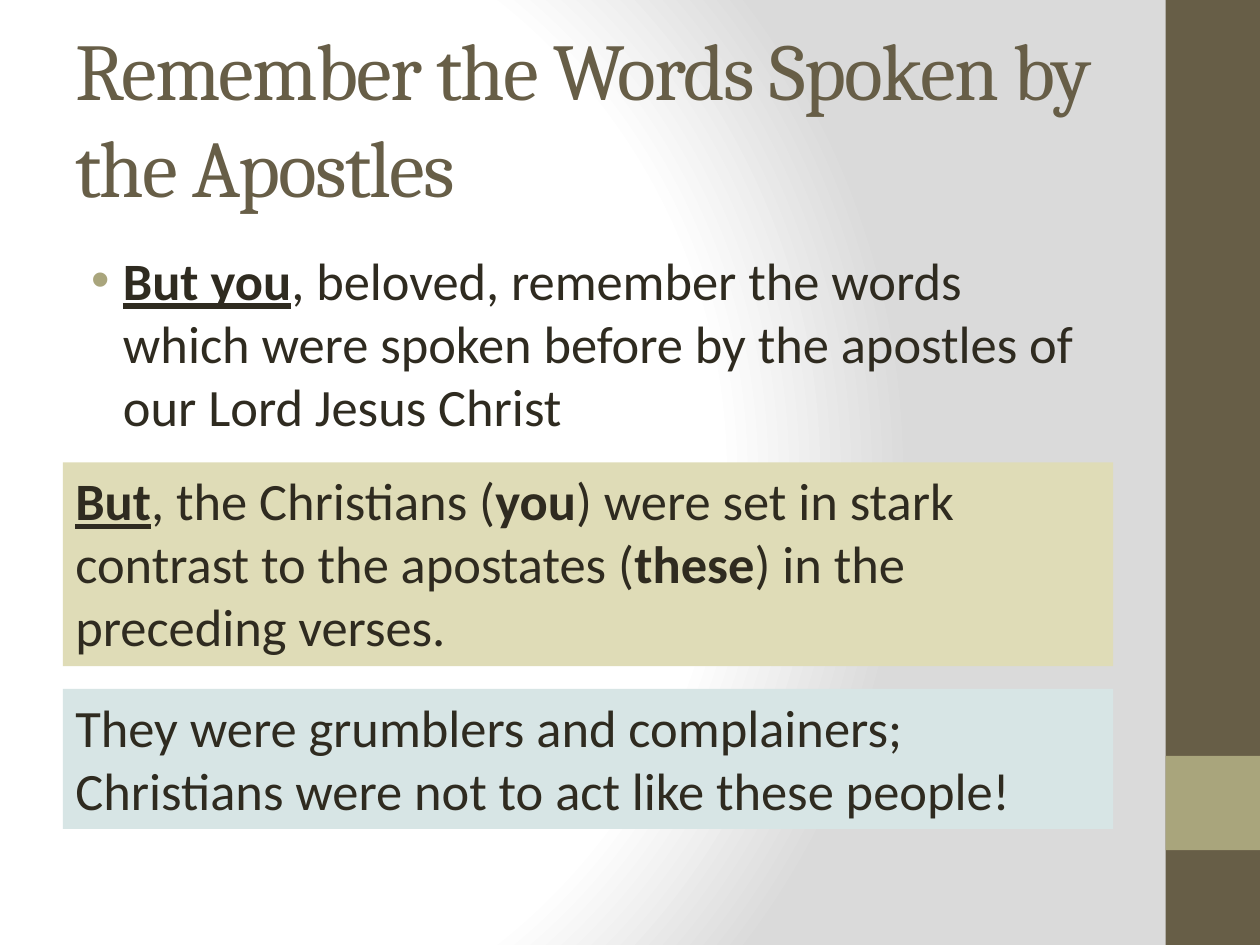
from lxml import etree
from pptx import Presentation
from pptx.dml.color import RGBColor
from pptx.enum import shapes, text
from pptx.oxml import parse_xml
from pptx.oxml.ns import nsdecls, qn
from pptx.util import Cm, Pt

BROWN = RGBColor(0x67, 0x5E, 0x47)
OLIVE = RGBColor(0xA9, 0xA5, 0x7C)
INK = RGBColor(0x2F, 0x2B, 0x20)
SAND = RGBColor(0xDF, 0xDC, 0xB7)
MIST = RGBColor(0xD7, 0xE5, 0xE5)
WHITE = RGBColor(0xFF, 0xFF, 0xFF)
GREY = RGBColor(0xDA, 0xDA, 0xDA)

LEFT, WIDTH = Cm(1.27), Cm(21.17)
BAND_LEFT, BAND_WIDTH = Cm(23.5), Cm(1.9)


def add_block(left, top, width, height, fill=None):
    """Add a borderless rectangle, or a plain text box when no fill is given."""
    if fill is None:
        block = slide.shapes.add_textbox(left, top, width, height)
    else:
        block = slide.shapes.add_shape(
            shapes.MSO_SHAPE.RECTANGLE, left, top, width, height)
        block.shadow.inherit = False
        block.fill.solid()
        block.fill.fore_color.rgb = fill
        block.line.fill.background()
    block.text_frame.word_wrap = True
    return block


def write(block, runs, size=30, font="Calibri", color=INK):
    """Write (wording, style) runs; style may hold b for bold and u for underline."""
    paragraph = block.text_frame.paragraphs[0]
    paragraph.alignment = text.PP_ALIGN.LEFT
    for wording, style in runs:
        run = paragraph.add_run()
        run.text = wording
        run.font.name, run.font.size = font, Pt(size)
        run.font.color.rgb = color
        run.font.bold, run.font.underline = "b" in style, "u" in style
    return paragraph


prs = Presentation()
prs.slide_width, prs.slide_height = Cm(25.4), Cm(19.05)
slide = prs.slides.add_slide(prs.slide_layouts[6])

# Background: white glow from the left, fading to grey
slide.background.fill.solid()
solid = slide.element.find(".//" + qn("p:bgPr")).find(qn("a:solidFill"))
stops = "".join(
    f'<a:gs pos="{percent * 1000}"><a:srgbClr val="{color}"/></a:gs>'
    for percent, color in ((0, WHITE), (75, WHITE), (100, GREY)))
solid.getparent().replace(solid, parse_xml(
    f'<a:gradFill {nsdecls("a")} rotWithShape="1"><a:gsLst>{stops}</a:gsLst>'
    '<a:path path="circle"><a:fillToRect l="20000" t="50000" r="100000" b="50000"/>'
    '</a:path></a:gradFill>'))

# Side band
add_block(BAND_LEFT, 0, BAND_WIDTH, prs.slide_height, BROWN)
add_block(BAND_LEFT, Cm(15.24), BAND_WIDTH, Cm(1.9), OLIVE)

# Title
title = add_block(LEFT, Cm(0.76), WIDTH, Cm(3.18))
title.text_frame.vertical_anchor = text.MSO_ANCHOR.MIDDLE
heading = write(title, [("Remember the Words Spoken by the Apostles", "")],
                46, "Cambria", BROWN)
heading.runs[0].font._element.set("spc", "-100")

# Bulleted verse
verse = write(add_block(LEFT, Cm(4.88), WIDTH, Cm(4.24)), [
    ("But you", "bu"),
    (", beloved, remember the words which were spoken before by the apostles "
     "of our Lord Jesus Christ", "")])
verse.space_before = Pt(6)
properties = verse._p.get_or_add_pPr()
properties.set("marL", str(Cm(0.96)))
properties.set("indent", str(-Cm(0.64)))
bullet_color = etree.SubElement(properties, qn("a:buClr"))
etree.SubElement(bullet_color, qn("a:srgbClr"), val=str(OLIVE))
etree.SubElement(properties, qn("a:buFont"), typeface="Arial")
etree.SubElement(properties, qn("a:buChar"), char="•")

# Comments on the verse
comments = [
    (9.32, 4.11, SAND, [
        ("But", "bu"), (", the Christians (", ""), ("you", "b"),
        (") were set in stark contrast to the apostates (", ""), ("these", "b"),
        (") in the preceding verses.", "")]),
    (13.89, 2.82, MIST, [
        ("They were grumblers and complainers; Christians were not to act "
         "like these people!", "")]),
]
for top, height, fill, runs in comments:
    comment = add_block(LEFT, Cm(top), WIDTH, Cm(height), fill)
    comment.text_frame.vertical_anchor = text.MSO_ANCHOR.TOP
    write(comment, runs)

prs.save("out.pptx")
